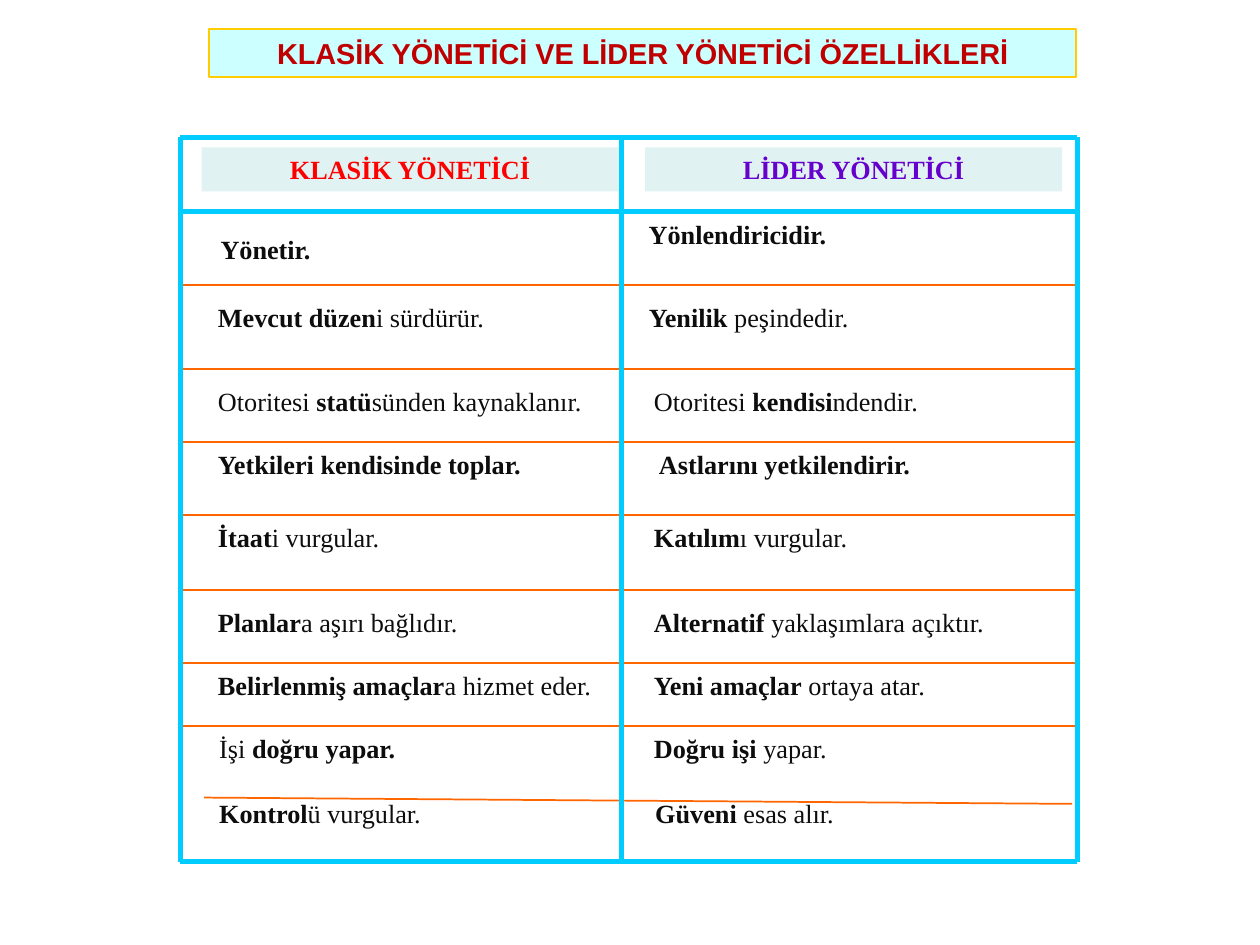
from pptx import Presentation
from pptx.dml.color import RGBColor
from pptx.enum.shapes import MSO_CONNECTOR as Conn, MSO_SHAPE as Shape
from pptx.enum.text import MSO_ANCHOR as Anchor, MSO_AUTO_SIZE as Fit, PP_ALIGN as Align
from pptx.util import Inches, Pt
from lxml.etree import SubElement
from pptx.oxml.ns import qn

COLORS = {
    "frame": "00CCFF", "rule": "FF6600", "ink": "0D0D0D", "band": "E1F2F3",
    "klasik": "FF0000", "lider": "6600CC",
    "title": "C00000", "title fill": "CCFFFF", "title edge": "FFCC00",
}
SERIF = "Times New Roman"

# Table frame
LEFT, MID, RIGHT = 1.43, 4.93, 8.55
TOP, HEAD, BOTTOM = 1.09, 1.68, 6.84
RULES = [2.26, 2.93, 3.51, 4.09, 4.68, 5.26, 5.76]
ROW = 0.35

# Columns: (top, box left, text left, wording); stars enclose bold words
KLASIK = [
    (1.8, 1.6, 1.75, "*Yönetir.*"),
    (2.34, 1.48, 1.73, "*Mevcut düzen*i sürdürür."),
    (3.01, 1.43, 1.73, "Otoritesi *statü*sünden kaynaklanır."),
    (3.51, 1.43, 1.73, "*Yetkileri kendisinde toplar.*"),
    (4.09, 1.53, 1.73, "*İtaat*i vurgular."),
    (4.76, 1.53, 1.73, "*Planlar*a aşırı bağlıdır."),
    (5.26, 1.53, 1.73, "*Belirlenmiş amaçlar*a hizmet eder."),
    (5.76, 1.59, 1.74, "İşi *doğru yapar.*"),
    (6.28, 1.59, 1.74, "*Kontrol*ü vurgular."),
]
LIDER = [
    (1.68, 5.05, 5.15, "*Yönlendiricidir.*"),
    (2.34, 5.06, 5.15, "*Yenilik* peşindedir."),
    (3.01, 4.99, 5.19, "Otoritesi *kendisi*ndendir."),
    (3.51, 4.93, 5.23, "*Astlarını yetkilendirir.*"),
    (4.09, 4.99, 5.19, "*Katılım*ı vurgular."),
    (4.76, 4.99, 5.19, "*Alternatif* yaklaşımlara açıktır."),
    (5.26, 4.99, 5.19, "*Yeni amaçlar* ortaya atar."),
    (5.76, 4.99, 5.19, "*Doğru işi* yapar."),
    (6.28, 5.05, 5.2, "*Güveni* esas alır."),
]


def rgb(name):
    return RGBColor.from_string(COLORS[name])


def style(run, font, size, color, bold):
    run.font.name = font
    run.font.size = Pt(size)
    run.font.bold = bold
    run.font.color.rgb = rgb(color)


def center(shape, text, font, size, color):
    frame = shape.text_frame
    frame.text = text
    frame.word_wrap = True
    frame.auto_size = Fit.NONE
    frame.vertical_anchor = Anchor.MIDDLE
    para = frame.paragraphs[0]
    para.alignment = Align.CENTER
    style(para.runs[0], font, size, color, True)


def add_title(slide, text):
    title = slide.shapes.title
    title.left, title.top = Inches(1.66), Inches(0.23)
    title.width, title.height = Inches(6.88), Inches(0.38)
    title.fill.solid()
    title.fill.fore_color.rgb = rgb("title fill")
    title.line.color.rgb = rgb("title edge")
    title.line.width = Pt(1)
    center(title, text, "Arial", 16.5, "title")


def add_line(slide, x1, y1, x2, y2, color, width):
    line = slide.shapes.add_connector(
        Conn.STRAIGHT, Inches(x1), Inches(y1), Inches(x2), Inches(y2))
    line.line.color.rgb = rgb(color)
    line.line.width = Pt(width)
    SubElement(line._element.spPr, qn("a:effectLst"))


def add_head(slide, x, text, color):
    band = slide.shapes.add_shape(
        Shape.RECTANGLE, Inches(x), Inches(1.17), Inches(3.31), Inches(ROW))
    band.shadow.inherit = False
    band.fill.solid()
    band.fill.fore_color.rgb = rgb("band")
    band.line.fill.background()
    center(band, text, SERIF, 15, color)


def add_cell(slide, top, left, start, edge, text):
    box = slide.shapes.add_textbox(
        Inches(left), Inches(top), Inches(edge - left), Inches(ROW))
    frame = box.text_frame
    frame.word_wrap = True
    frame.margin_left = Inches(start - left)
    frame.margin_right = 0
    for i, part in enumerate(text.split("*")):
        if part:
            run = frame.paragraphs[0].add_run()
            run.text = part
            style(run, SERIF, 15, "ink", i % 2 == 1)


def main():
    prs = Presentation()
    prs.slide_width, prs.slide_height = Inches(10), Inches(7.5)
    slide = prs.slides.add_slide(prs.slide_layouts[5])
    add_title(slide, "KLASİK YÖNETİCİ VE LİDER YÖNETİCİ ÖZELLİKLERİ")

    # Thin row rules; the last one slopes slightly
    for y in RULES:
        add_line(slide, LEFT, y, RIGHT, y, "rule", 1)
    add_line(slide, 1.62, 6.33, 8.51, 6.38, "rule", 1)

    # Thick frame
    for y in (TOP, HEAD, BOTTOM):
        add_line(slide, LEFT, y, RIGHT, y, "frame", 3)
    for x in (LEFT, MID, RIGHT):
        add_line(slide, x, TOP, x, BOTTOM, "frame", 3)

    # Column heads and cells
    add_head(slide, 1.6, "KLASİK YÖNETİCİ", "klasik")
    add_head(slide, 5.12, "LİDER YÖNETİCİ", "lider")
    for cells, edge in ((KLASIK, 4.85), (LIDER, 8.5)):
        for top, left, start, text in cells:
            add_cell(slide, top, left, start, edge, text)

    prs.save("out.pptx")


if __name__ == "__main__":
    main()
